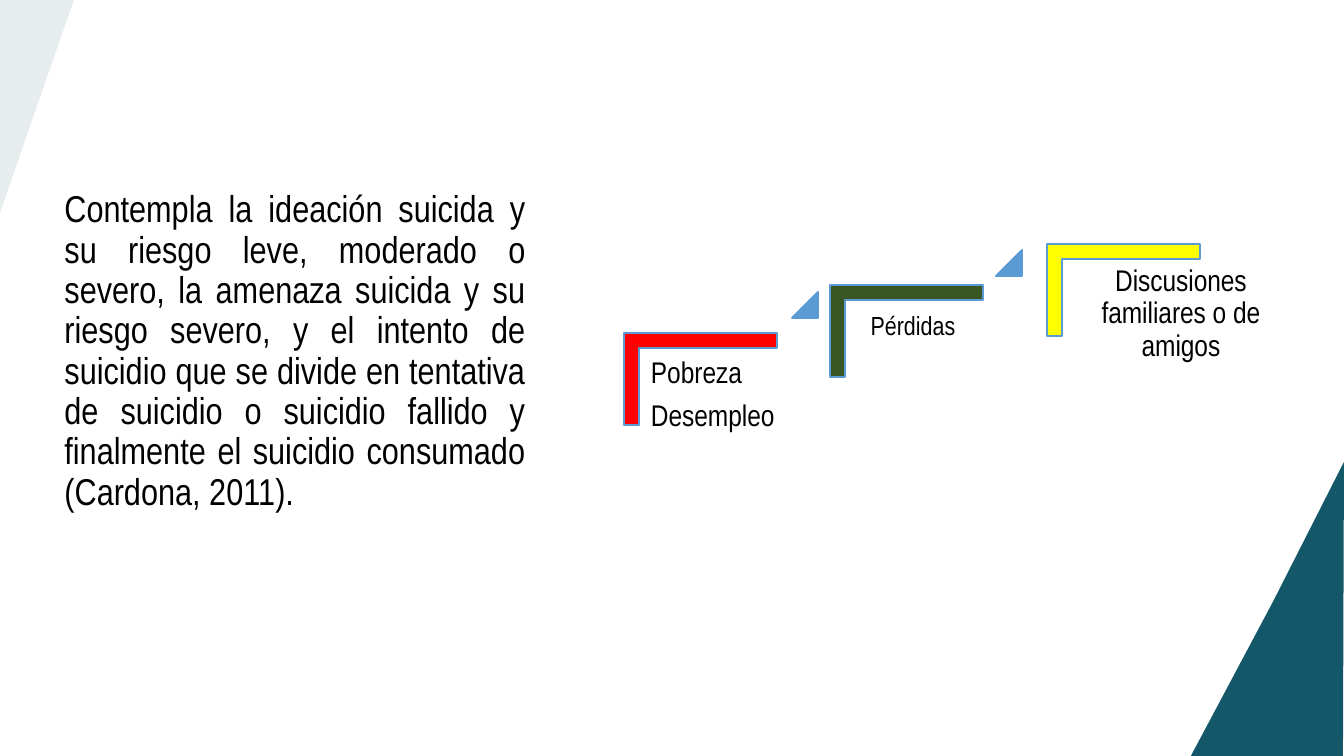
import pptx
import pptx.util
import pptx.dml.color
import pptx.enum.shapes
import pptx.enum.text
from dataclasses import dataclass
from lxml import etree

PX = 914400 / 134.4
A = "{http://schemas.openxmlformats.org/drawingml/2006/main}"
SHAPE = pptx.enum.shapes.MSO_SHAPE
ALIGN = pptx.enum.text.PP_ALIGN


@dataclass(frozen=True)
class Theme:
    font: str = "Arial Narrow"
    text: str = "000000"
    teal: str = "145768"
    accent: str = "5B9BD5"
    red: str = "FF0000"
    green: str = "385723"
    yellow: str = "FFFF00"
    body: int = 20
    label: int = 16
    small: int = 14


THEME = Theme()


def emu(px):
    return round(px * PX)


def paint(sp, fill, line=None):
    rgb = pptx.dml.color.RGBColor.from_string
    sp.shadow.inherit = False
    sp.fill.solid()
    sp.fill.fore_color.rgb = rgb(fill)
    if line:
        sp.line.color.rgb = rgb(line)
        sp.line.width = pptx.util.Pt(1)
    else:
        sp.line.fill.background()


def add_wedge(s, points, opacity=100):
    """Corner decoration; opacity is in percent."""
    builder = s.shapes.build_freeform(*points[0], scale=PX)
    builder.add_line_segments(points[1:], close=True)
    sp = builder.convert_to_shape()
    paint(sp, THEME.teal)
    if opacity < 100:
        color = sp._element.spPr.find(f"{A}solidFill/{A}srgbClr")
        etree.SubElement(color, f"{A}alpha", val=str(opacity * 1000))


def write_text(tf, *lines, size, align=ALIGN.LEFT, after=0, inset=None):
    tf.word_wrap = True
    tf.auto_size = pptx.enum.text.MSO_AUTO_SIZE.NONE
    tf.vertical_anchor = pptx.enum.text.MSO_ANCHOR.TOP
    if inset is not None:
        tf.margin_left = tf.margin_right = emu(inset)
        tf.margin_top = tf.margin_bottom = emu(inset)
    for i, line in enumerate(lines):
        p = tf.paragraphs[0] if i == 0 else tf.add_paragraph()
        p.alignment = align
        p.line_spacing = 0.9
        p.space_before = pptx.util.Pt(0)
        p.space_after = pptx.util.Pt(after)
        r = p.add_run()
        r.text = line
        r.font.name = THEME.font
        r.font.size = pptx.util.Pt(size)
        r.font.color.rgb = pptx.dml.color.RGBColor.from_string(THEME.text)


def fill_body(s, text, x, y, w, h):
    """Set the body placeholder as one justified paragraph without a bullet."""
    sp = s.placeholders[1]
    sp.left, sp.top, sp.width, sp.height = map(emu, (x, y, w, h))
    pPr = sp.text_frame.paragraphs[0]._p.get_or_add_pPr()
    pPr.set("marL", "0")
    pPr.set("indent", "0")
    etree.SubElement(pPr, f"{A}buNone")
    write_text(sp.text_frame, text, size=THEME.body, align=ALIGN.JUSTIFY)


def add_step(s, x, y, color):
    """Stair corner whose visible top left is at x, y."""
    w, h = 153, 92
    shift = (w - h) / 2
    sp = s.shapes.add_shape(SHAPE.CORNER, emu(x + shift), emu(y - shift), emu(h), emu(w))
    sp.rotation = 90
    sp.adjustments[0] = sp.adjustments[1] = 0.16
    paint(sp, color, THEME.accent)


def add_rise(s, x, y):
    """Small triangle that points up to the next step."""
    sp = s.shapes.add_shape(SHAPE.ISOSCELES_TRIANGLE, emu(x), emu(y), emu(26), emu(26))
    sp.adjustments[0] = 1
    paint(sp, THEME.accent, THEME.accent)


def add_label(s, lines, x, y, w, size, align, inset):
    box = s.shapes.add_textbox(emu(x), emu(y), emu(w), emu(121))
    write_text(box.text_frame, *lines, size=size, align=align,
               after=round(size * 0.35, 1), inset=inset)


def main():
    prs = pptx.Presentation()
    prs.slide_width, prs.slide_height = emu(1344), emu(756)
    s = prs.slides.add_slide(prs.slide_layouts[1])
    title = s.shapes.title._element
    title.getparent().remove(title)

    add_wedge(s, [(1344, 462), (1343, 756), (1191, 756), (1273, 602)])
    add_wedge(s, [(-1, -3), (75, -3), (35, 112), (-1, 216)], opacity=10)

    fill_body(s, "Contempla la ideación suicida y su riesgo leve, moderado o severo, "
              "la amenaza suicida y su riesgo severo, y el intento de suicidio que se "
              "divide en tentativa de suicidio o suicidio fallido y finalmente el "
              "suicidio consumado (Cardona, 2011).", 51, 184, 488, 332)

    for x, y, color in ((624, 333, THEME.red), (830, 285, THEME.green),
                        (1047, 244, THEME.yellow)):
        add_step(s, x, y, color)
    for x, y in ((792, 292), (996, 250)):
        add_rise(s, x, y)

    add_label(s, ["Pobreza", "Desempleo"], 642, 349, 210, THEME.label, ALIGN.LEFT, 9)
    add_label(s, ["Pérdidas"], 861, 305, 104, THEME.small, ALIGN.CENTER, 8)
    add_label(s, ["Discusiones familiares o de amigos"], 1060, 257, 242,
              THEME.label, ALIGN.CENTER, 9)
    prs.save("out.pptx")


if __name__ == "__main__":
    main()
